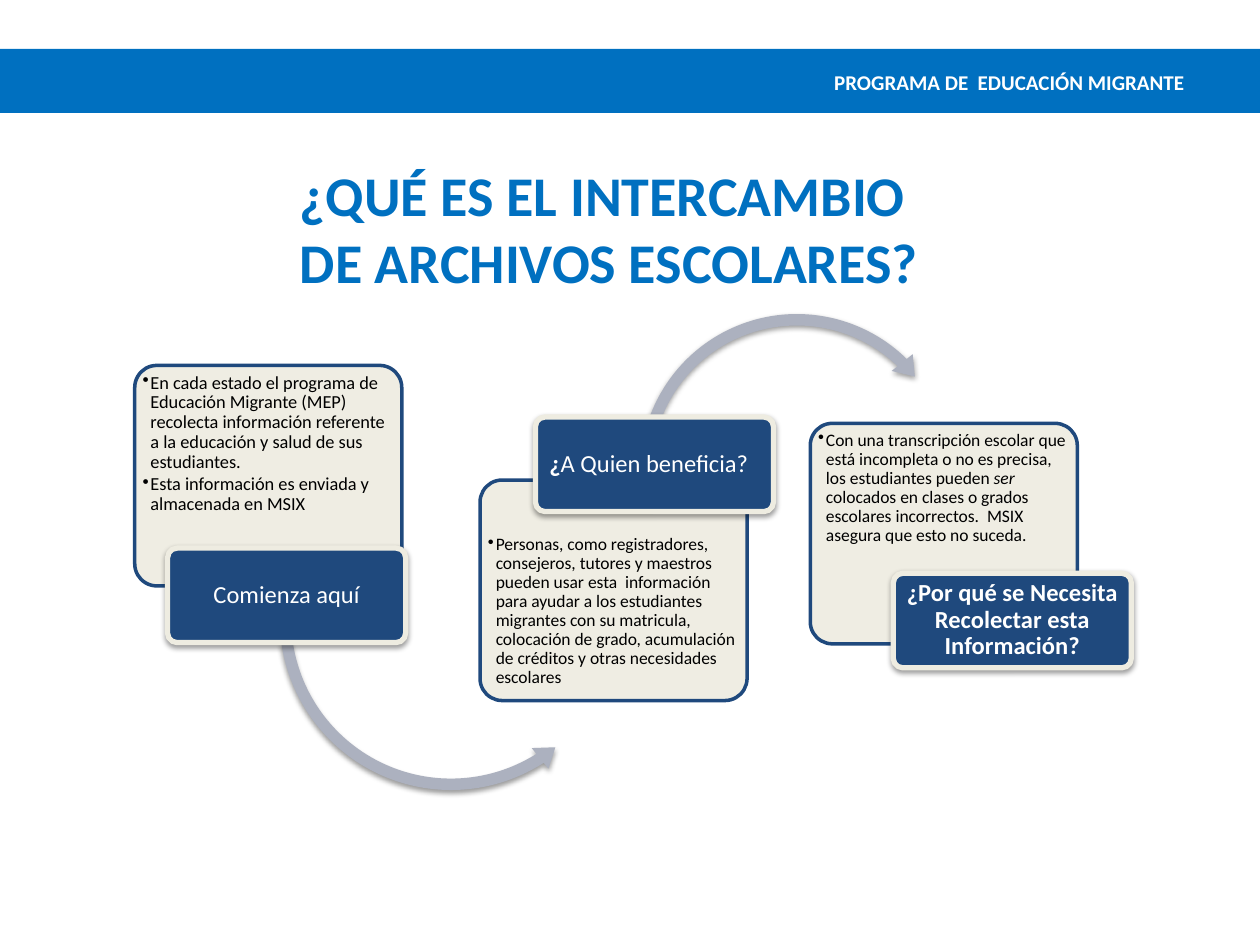
from lxml.etree import SubElement
from pptx import Presentation
from pptx.dml.color import RGBColor
from pptx.enum.shapes import MSO_SHAPE
from pptx.enum.text import MSO_ANCHOR, PP_ALIGN
from pptx.oxml.ns import qn
from pptx.util import Pt

COLORS = {
    "blue": "0070C0", "navy": "1F497D", "cream": "EEECE1",
    "arrow": "ACB1BF", "white": "FFFFFF", "black": "000000",
}
FONT = "Calibri"
CARD_SIZE = (152.6, 126)
LABEL_SIZE = (136, 54)


def rgb(name):
    return RGBColor.from_string(COLORS[name])


def add_box(slide, kind, box, fill, line=None, width=0):
    shape = slide.shapes.add_shape(kind, *map(Pt, box))
    shape.shadow.inherit = False
    shape.fill.solid()
    shape.fill.fore_color.rgb = rgb(fill)
    if line:
        shape.line.color.rgb = rgb(line)
        shape.line.width = Pt(width)
    else:
        shape.line.fill.background()
    return shape


def add_shadow(shape):
    effects = shape._element.spPr.find(qn("a:effectLst"))
    shadow = SubElement(effects, qn("a:outerShdw"), blurRad=str(Pt(3.1)),
                        dist=str(Pt(1.6)), dir="5400000", rotWithShape="0")
    color = SubElement(shadow, qn("a:srgbClr"), val=COLORS["black"])
    SubElement(color, qn("a:alpha"), val="38000")


def set_frame(frame, insets, anchor):
    frame.word_wrap = True
    frame.vertical_anchor = anchor
    (frame.margin_left, frame.margin_top,
     frame.margin_right, frame.margin_bottom) = map(Pt, insets)


def add_run(paragraph, text, size, color, bold=False, italic=False):
    run = paragraph.add_run()
    run.text = text
    font = run.font
    font.name, font.size, font.bold, font.italic = FONT, Pt(size), bold, italic
    font.color.rgb = rgb(color)


def add_bullet(paragraph):
    props = paragraph._p.get_or_add_pPr()
    props.set("marL", str(Pt(4.5)))
    props.set("indent", str(Pt(-4.5)))
    SubElement(props, qn("a:buChar"), char="•")


def header(slide, box):
    left, top, width, height = box
    add_box(slide, MSO_SHAPE.RECTANGLE, box, "blue")
    program = slide.shapes.add_textbox(Pt(left + 138), Pt(top + 8), Pt(546), Pt(height - 8))
    set_frame(program.text_frame, (7.2, 3.6, 7.2, 3.6), MSO_ANCHOR.TOP)
    paragraph = program.text_frame.paragraphs[0]
    paragraph.alignment = PP_ALIGN.RIGHT
    add_run(paragraph, "PROGRAMA DE  EDUCACIÓN MIGRANTE", 12, "white", bold=True)


def title(slide, box):
    heading = slide.shapes.add_textbox(*map(Pt, box))
    set_frame(heading.text_frame, (7.2, 3.6, 7.2, 3.6), MSO_ANCHOR.MIDDLE)
    paragraph = heading.text_frame.paragraphs[0]
    paragraph.alignment = PP_ALIGN.CENTER
    add_run(paragraph, "¿QUÉ ES EL INTERCAMBIO ", 32, "blue", bold=True)
    paragraph.add_line_break()
    add_run(paragraph, "DE ARCHIVOS ESCOLARES?", 32, "blue", bold=True)


def card(slide, box, bullets, size, text_top=0.8):
    panel = add_box(slide, MSO_SHAPE.ROUNDED_RECTANGLE, box, "cream", "navy", 2)
    panel.adjustments[0] = 0.1
    color = panel._element.spPr.find(qn("a:solidFill")).find(qn("a:srgbClr"))
    SubElement(color, qn("a:alpha"), val="90000")
    frame = panel.text_frame
    set_frame(frame, (0.8, text_top, 0.8, 0.8), MSO_ANCHOR.TOP)
    for index, runs in enumerate(bullets):
        paragraph = frame.add_paragraph() if index else frame.paragraphs[0]
        add_bullet(paragraph)
        paragraph.alignment = PP_ALIGN.LEFT
        paragraph.line_spacing = 0.9
        paragraph.space_after = Pt(1.5)
        for text, italic in runs:
            add_run(paragraph, text, size, "black", italic=italic)


def arrow(slide, kind, box, adjustments):
    curve = add_box(slide, kind, box, "arrow")
    add_shadow(curve)
    for index, value in enumerate(adjustments):
        curve.adjustments[index] = value


def label(slide, box, runs):
    plate = add_box(slide, MSO_SHAPE.ROUNDED_RECTANGLE, box, "navy", "cream", 3)
    plate.adjustments[0] = 0.1
    add_shadow(plate)
    set_frame(plate.text_frame, (2.2, 1.4, 2.2, 1.4), MSO_ANCHOR.MIDDLE)
    paragraph = plate.text_frame.paragraphs[0]
    paragraph.alignment = PP_ALIGN.CENTER
    paragraph.line_spacing = 0.9
    for text, bold in runs:
        add_run(paragraph, text, 14, "white", bold=bold)


def step(slide, origin, content):
    left, top = origin
    card(slide, (left, top, *CARD_SIZE), content["bullets"], content["size"],
         content.get("text_top", 0.8))
    if "arrow" in content:
        kind, dx, dy, side, adjustments = content["arrow"]
        arrow(slide, kind, (left + dx, top + dy, side, side), adjustments)
    dx, dy = content["label_offset"]
    label(slide, (left + dx, top + dy, *LABEL_SIZE), content["label"])


STEPS = [
    ((77, 208.8), {
        "bullets": [
            [("En cada estado el programa de Educación Migrante (MEP) recolecta "
              "información referente a la educación y salud de sus estudiantes.", False)],
            [("Esta información es enviada y almacenada en MSIX", False)],
        ],
        "size": 10.5,
        "arrow": (MSO_SHAPE.LEFT_CIRCULAR_ARROW, 78.5, 42.5, 204.5,
                  (0.032, 3.934, 34.496, 103.051, 0.037)),
        "label_offset": (18.8, 104.4),
        "label": [("Comienza aquí", False)],
    }),
    ((274.3, 274.3), {
        "bullets": [
            [("Personas, como registradores, consejeros, tutores y maestros pueden usar "
              "esta  información para ayudar a los estudiantes migrantes con su matricula, "
              "colocación de grado, acumulación de créditos y otras necesidades escolares",
              False)],
        ],
        "size": 10,
        "text_top": 28,
        "arrow": (MSO_SHAPE.CIRCULAR_ARROW, 87.1, -99.3, 187.9,
                  (0.035, 4.305, 188.555, 120.371, 0.041)),
        "label_offset": (31.7, -36),
        "label": [("¿", True), ("A Quien beneficia?  ", False)],
    }),
    ((463, 241.9), {
        "bullets": [
            [("Con una transcripción escolar que está incompleta o no es precisa, "
              "los estudiantes pueden ", False),
             ("ser ", True),
             ("colocados en clases o grados escolares incorrectos.  MSIX asegura "
              "que esto no suceda.", False)],
        ],
        "size": 10,
        "label_offset": (47.5, 85.7),
        "label": [("¿Por qué se Necesita Recolectar esta Información?", True)],
    }),
]


def main():
    deck = Presentation()
    deck.slide_width, deck.slide_height = Pt(720), Pt(540)
    slide = deck.slides.add_slide(deck.slide_layouts[6])
    header(slide, (0, 28, 720, 36.5))
    title(slide, (12.2, 85, 671.8, 90))
    for origin, content in STEPS:
        step(slide, origin, content)
    deck.save("out.pptx")


if __name__ == "__main__":
    main()
